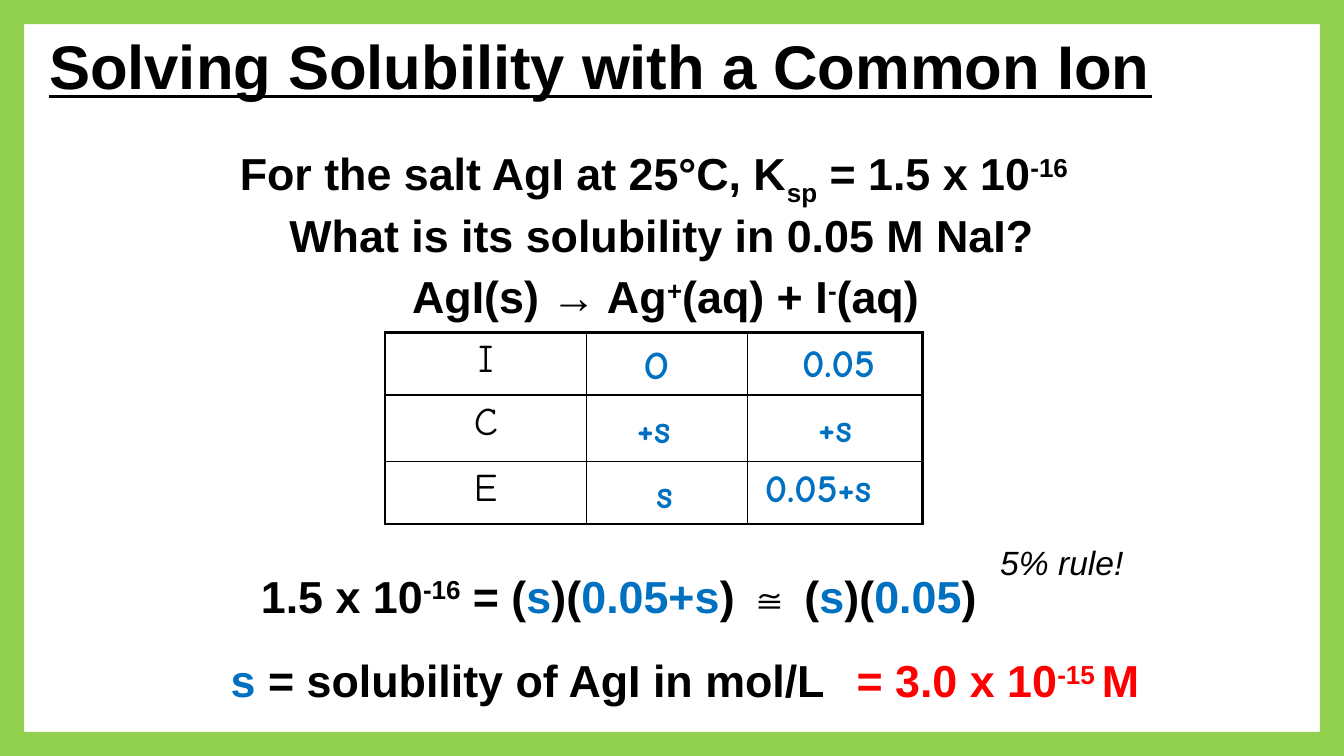
from lxml import etree
from pptx import Presentation
from pptx.dml.color import RGBColor
from pptx.enum.shapes import MSO_SHAPE
from pptx.enum.text import MSO_ANCHOR, PP_ALIGN
from pptx.oxml.ns import qn
from pptx.util import Pt

FRAME = MSO_SHAPE.FRAME
TOP, MIDDLE = MSO_ANCHOR.TOP, MSO_ANCHOR.MIDDLE
LEFT, CENTER = PP_ALIGN.LEFT, PP_ALIGN.CENTER

THEME = {
    "ink": "000000", "unknown": "0070C0", "answer": "FF0000", "frame": "92D050",
    "body": "Arial", "hand": "Comic Neue",
    "title_size": 44, "body_size": 32, "hand_size": 28, "note_size": 24,
    "outer_line": 2.25, "inner_line": 1,
}
SUB, SUPER = -25, 30
SLIDE = (960, 540)

TITLE = "Solving Solubility with a Common Ion"
QUESTION = [
    [("For the salt AgI at 25°C, K",), ("sp", "ink", SUB), (" = 1.5 x 10",), ("-16", "ink", SUPER)],
    [("What is its solubility in 0.05 M NaI?",)],
]
REACTION = [[("AgI(s) → Ag",), ("+", "ink", SUPER), ("(aq) + I",), ("-", "ink", SUPER), ("(aq)",)]]
EXPRESSION = [[
    ("1.5 x 10",), ("-16", "ink", SUPER), (" = (",), ("s", "unknown"), (")(",),
    ("0.05+s", "unknown"), (") ≅ (",), ("s", "unknown"), (")(",), ("0.05", "unknown"), (")",),
]]
DEFINITION = [[("s", "unknown"), (" = solubility of AgI in mol/L",)]]
ANSWER = [[("= 3.0 x 10", "answer"), ("-15 ", "answer", SUPER), ("M", "answer")]]
RULE = "5% rule!"

STAGES = ["I", "C", "E"]
ICE_LEFT, ICE_TOP = 275, 237.6
ICE_COLUMNS = [144, 115.2, 124.6]
ICE_ROWS = [44.6, 47.5, 44.6]
ICE_ENTRIES = [
    ("O", 452.9, 239.8, 36.7), ("0.05", 565.9, 238.3, 77.8),
    ("+s", 447.8, 285.1, 45.4), ("+s", 577.4, 284.4, 45.4),
    ("s", 461.5, 331.9, 28.1), ("0.05+s", 539.3, 327.6, 111.6),
]
ENTRY_HEIGHT = 41


def color(name):
    return RGBColor.from_string(THEME[name])


def write(frame, content, face="body", size="body_size", ink="ink", bold=True, italic=False,
          underline=False, align=LEFT, anchor=TOP, wrap=True, indents=(0,)):
    lines = [[(content,)]] if isinstance(content, str) else content
    frame.word_wrap = wrap
    frame.vertical_anchor = anchor
    for index, line in enumerate(lines):
        paragraph = frame.paragraphs[0] if index == 0 else frame.add_paragraph()
        paragraph.alignment = align
        if index < len(indents) and indents[index]:
            paragraph._p.get_or_add_pPr().set("marL", str(Pt(indents[index])))
        for text, tint, shift in ((part + (ink, 0)[len(part) - 1:]) for part in line):
            run = paragraph.add_run()
            run.text = text
            run.font.name = THEME[face]
            run.font.size = Pt(THEME[size])
            run.font.bold = bold
            run.font.italic = italic
            run.font.underline = underline
            run.font.color.rgb = color(tint)
            if shift:
                run._r.get_or_add_rPr().set("baseline", str(shift * 1000))


def place(slide, content, left, top, width, height, **style):
    box = slide.shapes.add_textbox(Pt(left), Pt(top), Pt(width), Pt(height))
    write(box.text_frame, content, **style)


def border(cell, row, column):
    last_row, last_column = len(ICE_ROWS) - 1, len(ICE_COLUMNS) - 1
    outer = {"lnL": column == 0, "lnR": column == last_column,
             "lnT": row == 0, "lnB": row == last_row}
    properties = cell._tc.get_or_add_tcPr()
    for position, (edge, is_outer) in enumerate(outer.items()):
        weight = THEME["outer_line" if is_outer else "inner_line"]
        line = etree.Element(qn("a:" + edge), w=str(Pt(weight)))
        fill = etree.SubElement(line, qn("a:solidFill"))
        etree.SubElement(fill, qn("a:srgbClr"), val=THEME["ink"])
        properties.insert(position, line)


def add_ice_table(slide):
    table = slide.shapes.add_table(
        len(ICE_ROWS), len(ICE_COLUMNS), Pt(ICE_LEFT), Pt(ICE_TOP),
        Pt(sum(ICE_COLUMNS)), Pt(sum(ICE_ROWS))).table
    table.first_row = False
    table.horz_banding = False
    for column, width in enumerate(ICE_COLUMNS):
        table.columns[column].width = Pt(width)
    for row, height in enumerate(ICE_ROWS):
        table.rows[row].height = Pt(height)
        for column in range(len(ICE_COLUMNS)):
            cell = table.cell(row, column)
            cell.fill.background()
            border(cell, row, column)
        write(table.cell(row, 0).text_frame, STAGES[row], face="hand", size="hand_size",
              bold=False, align=CENTER)


def main():
    deck = Presentation()
    deck.slide_width, deck.slide_height = (Pt(side) for side in SLIDE)
    slide = deck.slides.add_slide(deck.slide_layouts[6])

    edge = slide.shapes.add_shape(FRAME, 0, 0, deck.slide_width, deck.slide_height)
    edge.adjustments[0] = 0.032
    edge.shadow.inherit = False
    edge.fill.solid()
    edge.fill.fore_color.rgb = color("frame")
    edge.line.fill.background()

    place(slide, TITLE, 18, 9.4, 822, 74, size="title_size", underline=True,
          align=CENTER, anchor=MIDDLE)
    place(slide, QUESTION, 164.2, 100.8, 648.7, 85, indents=(0, 35.5))
    place(slide, REACTION, 287.3, 188.6, 380.9, 46, wrap=False)
    add_ice_table(slide)
    for entry, left, top, width in ICE_ENTRIES:
        place(slide, entry, left, top, width, ENTRY_HEIGHT, face="hand", size="hand_size",
              ink="unknown", wrap=False)
    place(slide, EXPRESSION, 179.3, 402.5, 635, 46)
    place(slide, DEFINITION, 157.7, 463, 442.8, 46, wrap=False)
    place(slide, ANSWER, 604.8, 463, 223.2, 46, wrap=False)
    place(slide, RULE, 658.8, 383.8, 199.4, 36, size="note_size", bold=False, italic=True,
          align=CENTER)
    deck.save("out.pptx")


if __name__ == "__main__":
    main()
